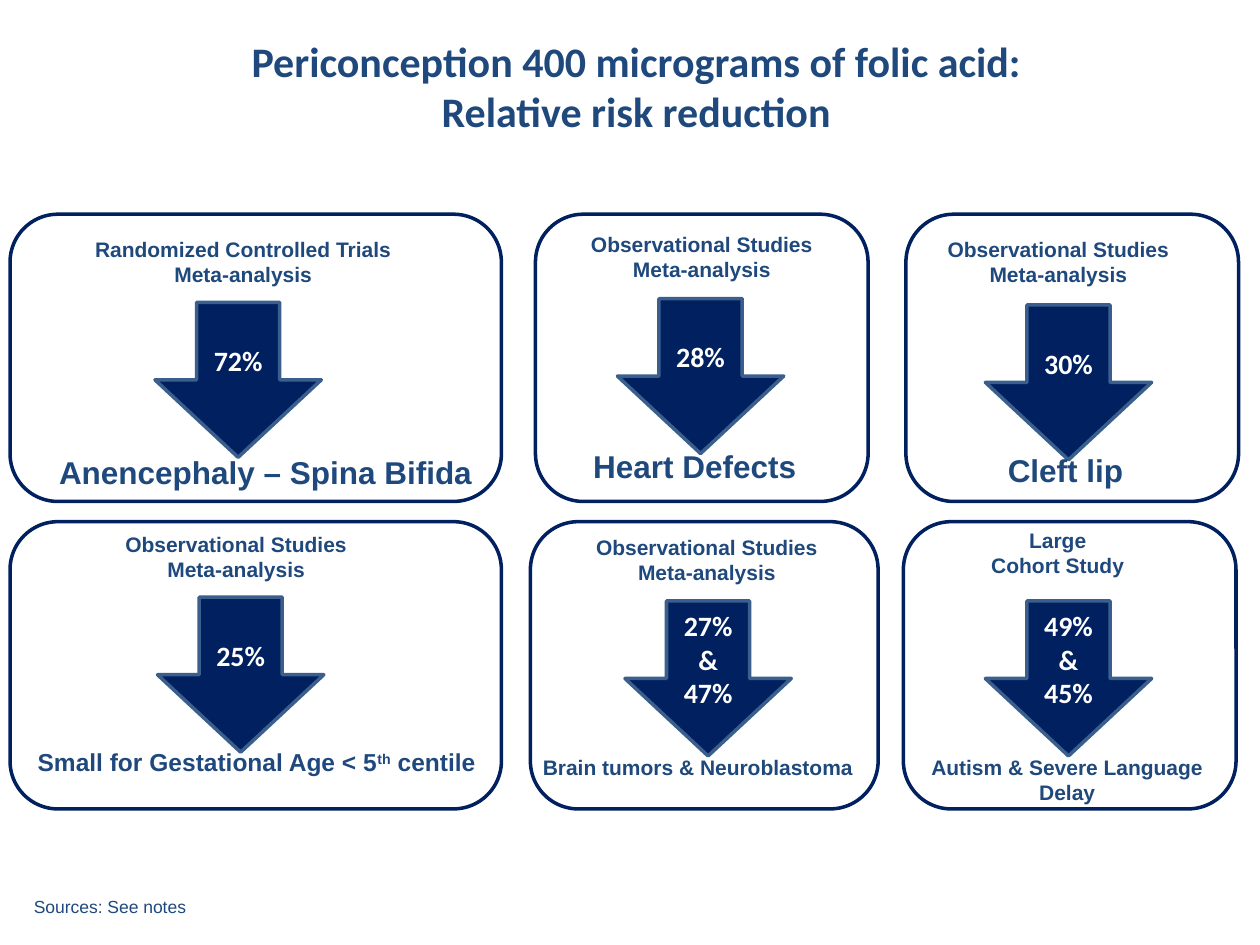
from pptx import Presentation, util as u
from pptx.dml.color import RGBColor
from pptx.enum import shapes, text

COLORS = {"ink": "1F497D", "navy": "002060", "edge": "3A5F8C", "white": "FFFFFF"}

deck = Presentation()
deck.slide_width, deck.slide_height = u.Inches(10), u.Inches(7.5)
slide = deck.slides.add_slide(deck.slide_layouts[5])


def write(frame, lines, size=12, color="ink", font="Arial", bold=True,
          align="CENTER", anchor="TOP", wrap=True, grow=False):
    """Fill a text frame; a line is a string or a list of (string, baseline) runs."""
    frame.word_wrap = wrap
    frame.vertical_anchor = getattr(text.MSO_ANCHOR, anchor)
    frame.auto_size = (text.MSO_AUTO_SIZE.SHAPE_TO_FIT_TEXT if grow
                       else text.MSO_AUTO_SIZE.NONE)
    for i, line in enumerate(lines):
        paragraph = frame.paragraphs[0] if i == 0 else frame.add_paragraph()
        paragraph.alignment = getattr(text.PP_ALIGN, align)
        for words, baseline in [(line, 0)] if isinstance(line, str) else line:
            run = paragraph.add_run()
            run.text = words
            run.font.size, run.font.bold, run.font.name = u.Pt(size), bold, font
            run.font.color.rgb = RGBColor.from_string(COLORS[color])
            if baseline:
                run._r.get_or_add_rPr().set("baseline", str(baseline * 1000))


def outline(kind, box, line, fill=None):
    """Add a preset shape with a 2 pt outline."""
    shape = slide.shapes.add_shape(kind, *map(u.Inches, box))
    shape.shadow.inherit = False
    shape.line.color.rgb = RGBColor.from_string(COLORS[line])
    shape.line.width = u.Pt(2)
    if fill:
        shape.fill.solid()
        shape.fill.fore_color.rgb = RGBColor.from_string(COLORS[fill])
    else:
        shape.fill.background()
    return shape


# Title
title = slide.shapes.title
title.left, title.top, title.width, title.height = map(u.Inches, (0.55, 0.23, 9, 1.25))
write(title.text_frame, ["Periconception 400 micrograms of folic acid:",
                         "Relative risk reduction"], size=24, font="Calibri")
for paragraph in title.text_frame.paragraphs:
    paragraph.space_before = u.Pt(0)

# Two rows of three panels
ROWS = (1.7, 4.14)
PANEL_HEIGHT = 2.28
ARROW = (1.32, 1.23)
OBSERVATIONAL = ["Observational Studies", "Meta-analysis"]
CENTILE = [("Small for Gestational Age < 5", 0), ("th", 30), (" centile", 0)]

# row, panel (left, width), study, study (left, top, width), reduction, arrow (left, top),
# outcome, outcome (left, top, width, height), outcome format; tops count from the row
PANELS = [
    (0, (0.08, 3.9), ["Randomized Controlled Trials", "Meta-analysis"], (0.64, 0.13, 2.58),
     ["72%"], (1.23, 0.7), "Anencephaly – Spina Bifida", (0.37, 1.85, 3.51, 0.4),
     dict(size=18, align="LEFT", wrap=False)),
    (0, (4.25, 2.64), OBSERVATIONAL, (4.58, 0.09, 1.98),
     ["28%"], (4.9, 0.67), "Heart Defects", (4.61, 1.8, 1.97, 0.4),
     dict(size=18, align="LEFT", wrap=False)),
    (0, (7.19, 2.64), OBSERVATIONAL, (7.41, 0.13, 1.98),
     ["30%"], (7.82, 0.72), "Cleft lip", (7.9, 1.83, 1.13, 0.4),
     dict(size=18, align="LEFT", wrap=False)),
    (1, (0.08, 3.9), OBSERVATIONAL, (0.86, 0.03, 2.03),
     ["25%"], (1.25, 0.6), CENTILE, (0.2, 1.74, 3.71, 0.34),
     dict(size=14, align="LEFT", wrap=False)),
    (1, (4.21, 2.76), OBSERVATIONAL, (4.62, 0.05, 1.98),
     ["27% &", "47%"], (4.96, 0.63), "Brain tumors & Neuroblastoma", (4.21, 1.8, 2.76, 0.3),
     dict(align="LEFT")),
    (1, (7.17, 2.64), ["Large", "Cohort Study"], (7.76, 0, 1.27),
     ["49% &", "45%"], (7.82, 0.63), "Autism & Severe Language Delay",
     (7.13, 1.8, 2.68, 0.5), {}),
]

for (row, (left, width), study, (study_x, study_y, study_w), reduction,
     (arrow_x, arrow_y), outcome, (out_x, out_y, out_w, out_h), style) in PANELS:
    top = ROWS[row]
    outline(shapes.MSO_SHAPE.ROUNDED_RECTANGLE, (left, top, width, PANEL_HEIGHT), "navy")

    heading = slide.shapes.add_textbox(*map(u.Inches, (study_x, top + study_y, study_w, 0.5)))
    write(heading.text_frame, study, wrap=False, grow=True)

    arrow = outline(shapes.MSO_SHAPE.DOWN_ARROW, (arrow_x, top + arrow_y, *ARROW),
                    "edge", fill="navy")
    write(arrow.text_frame, reduction, size=16, color="white", font="Calibri",
          anchor="MIDDLE")

    result = slide.shapes.add_textbox(*map(u.Inches, (out_x, top + out_y, out_w, out_h)))
    write(result.text_frame, [outcome], grow=True, **style)

# Sources
sources = slide.shapes.add_textbox(*map(u.Inches, (0.17, 6.89, 10.39, 0.44)))
write(sources.text_frame, ["Sources: See notes"], size=10, bold=False, align="LEFT",
      anchor="BOTTOM")

deck.save("out.pptx")
